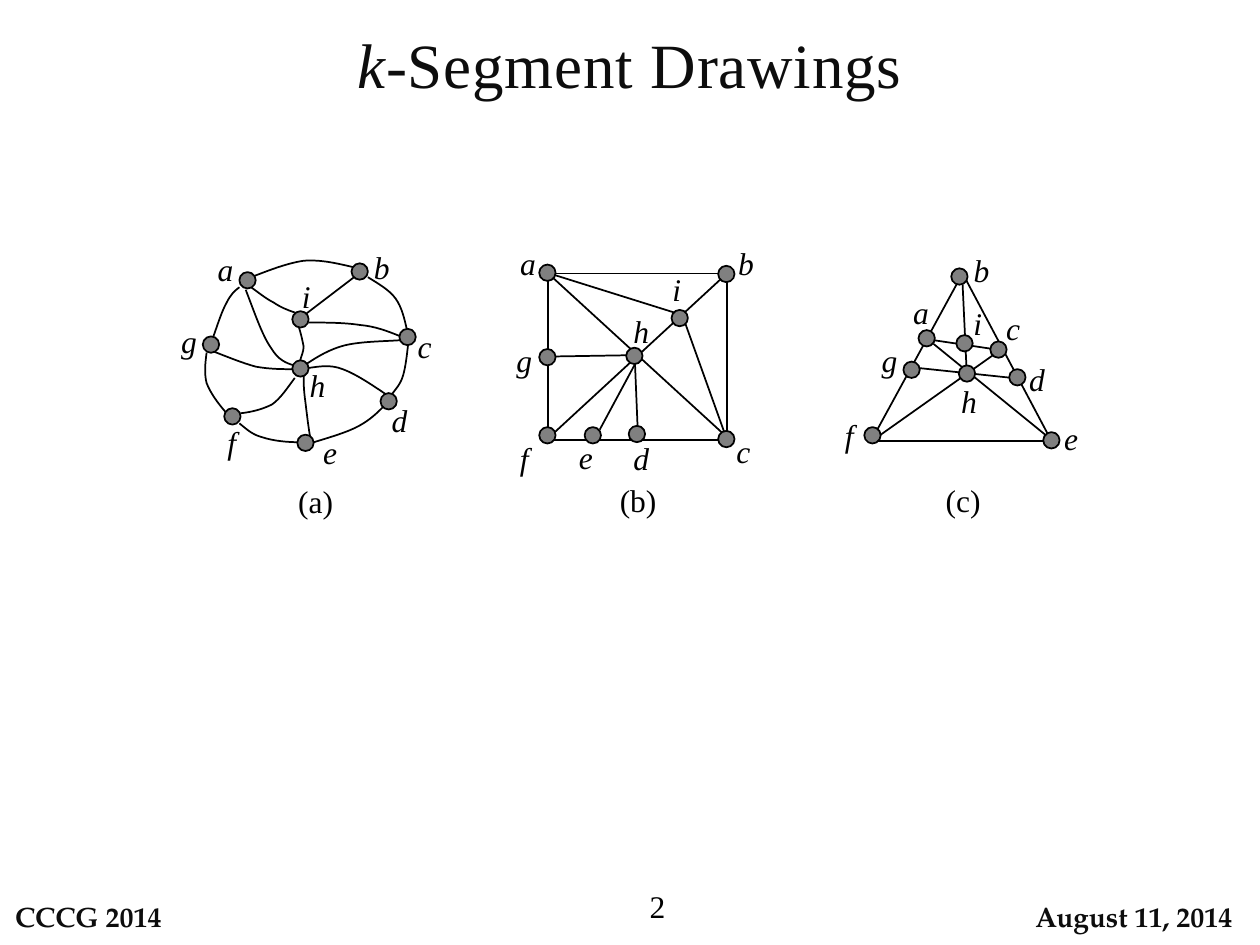
from lxml import etree
from pptx import Presentation, util as u
from pptx.dml.color import RGBColor
from pptx.enum import shapes, text
from pptx.oxml.ns import qn

COLORS = {"ink": "000000", "heading": "0D0D0D", "vertex": "808080"}
SERIF, FOOTER = "Times New Roman", "TeX Gyre Pagella"
COLS, ROWS = 10, 7.5  # square grid cells covering the slide
DOT = 0.13
LABEL = (0.38, 0.25)
CAPTION = (0.53, 0.25)

# Vertices: name -> dot column, dot row, label column, label row
CURVED_VERTICES = {
    "a": (1.9, 2.16, 1.6, 2.01), "b": (2.79, 2.09, 2.84, 1.99),
    "c": (3.17, 2.61, 3.18, 2.62), "d": (3.02, 3.12, 2.98, 3.21),
    "e": (2.36, 3.45, 2.43, 3.46), "f": (1.78, 3.24, 1.65, 3.38),
    "g": (1.61, 2.67, 1.31, 2.58), "h": (2.32, 2.86, 2.33, 2.93),
    "i": (2.32, 2.47, 2.24, 2.22),
}
SQUARE_VERTICES = {
    "a": (4.28, 2.1, 4, 1.96), "b": (5.7, 2.11, 5.73, 1.96),
    "c": (5.7, 3.42, 5.71, 3.45), "d": (4.99, 3.38, 4.9, 3.51),
    "e": (4.64, 3.39, 4.46, 3.5), "f": (4.28, 3.39, 3.97, 3.51),
    "g": (4.28, 2.77, 3.97, 2.73), "h": (4.97, 2.76, 4.9, 2.5),
    "i": (5.33, 2.46, 5.18, 2.17),
}
TRIANGLE_VERTICES = {
    "a": (7.29, 2.62, 7.12, 2.35), "b": (7.55, 2.13, 7.6, 2.02),
    "c": (7.86, 2.71, 7.85, 2.48), "d": (8.01, 2.93, 8.04, 2.88),
    "e": (8.28, 3.43, 8.31, 3.35), "f": (6.86, 3.39, 6.55, 3.33),
    "g": (7.17, 2.87, 6.87, 2.73), "h": (7.61, 2.9, 7.5, 3.06),
    "i": (7.59, 2.66, 7.57, 2.44),
}

# Curved edges: a start point, then control, control, end for each Bezier piece
CURVES = [
    [(2.45, 2.56), (2.59, 2.56), (2.73, 2.56), (2.86, 2.58), (2.98, 2.59), (3.08, 2.63), (3.18, 2.67)],
    [(2.92, 2.2), (3, 2.25), (3.09, 2.3), (3.14, 2.37), (3.19, 2.44), (3.21, 2.53), (3.23, 2.62)],
    [(2.38, 2.87), (2.39, 2.83), (2.41, 2.79), (2.41, 2.75), (2.4, 2.7), (2.39, 2.65), (2.37, 2.59)],
    [(1.67, 2.78), (1.8, 2.83), (1.92, 2.88), (2.03, 2.91), (2.14, 2.93), (2.24, 2.93), (2.33, 2.93)],
    [(1.91, 3.28), (2, 3.27), (2.08, 3.25), (2.16, 3.21), (2.23, 3.16), (2.28, 3.08), (2.34, 3)],
    [(1.64, 2.8), (1.63, 2.88), (1.62, 2.96), (1.64, 3.04), (1.67, 3.12), (1.73, 3.2), (1.79, 3.27)],
    [(2.46, 3.46), (2.44, 3.34), (2.43, 3.23), (2.42, 3.16), (2.41, 3.08), (2.41, 3.03), (2.41, 2.98)],
    [(2.45, 2.92), (2.53, 2.91), (2.62, 2.89), (2.72, 2.93), (2.83, 2.97), (2.96, 3.06), (3.08, 3.14)],
    [(1.9, 3.36), (1.95, 3.4), (2, 3.45), (2.08, 3.47), (2.17, 3.5), (2.28, 3.51), (2.38, 3.51)],
    [(2.49, 3.51), (2.62, 3.47), (2.76, 3.43), (2.85, 3.38), (2.94, 3.33), (2.99, 3.28), (3.04, 3.23)],
    [(3.11, 3.13), (3.14, 3.09), (3.18, 3.05), (3.2, 2.98), (3.22, 2.91), (3.23, 2.82), (3.24, 2.73)],
    [(2.43, 2.89), (2.52, 2.83), (2.62, 2.77), (2.74, 2.74), (2.87, 2.71), (3.03, 2.71), (3.18, 2.7)],
    [(1.69, 2.68), (1.73, 2.57), (1.76, 2.47), (1.8, 2.4), (1.83, 2.34), (1.86, 2.31), (1.9, 2.28)],
    [(2.02, 2.19), (2.15, 2.14), (2.28, 2.09), (2.41, 2.07), (2.55, 2.06), (2.67, 2.09), (2.8, 2.12)],
    [(1.98, 2.27), (2.05, 2.32), (2.11, 2.37), (2.17, 2.4), (2.23, 2.44), (2.28, 2.46), (2.34, 2.48)],
    [(1.95, 2.3), (2.02, 2.48), (2.08, 2.66), (2.15, 2.76), (2.21, 2.86), (2.27, 2.88), (2.33, 2.9)],
]

# Straight edges: from column, row to column, row
CURVED_LINES = [(2.43, 2.49, 2.81, 2.2)]
SQUARE_LINES = [
    (4.36, 3.47, 5.77, 2.17), (5.77, 3.47, 4.35, 2.17), (5.35, 2.48, 4.36, 2.17),
    (4.97, 2.82, 4.35, 2.83), (4.76, 3.41, 5.04, 2.89), (5.06, 3.38, 5.04, 2.89),
    (5.77, 3.49, 5.44, 2.57),
]
TRIANGLE_LINES = [
    (6.93, 3.47, 7.64, 2.17), (8.32, 3.47, 7.41, 2.73), (7.88, 2.77, 7.41, 2.7),
    (8.04, 3, 7.28, 2.92), (6.99, 3.45, 7.88, 2.82), (7.64, 2.26, 7.67, 2.9),
    (8.34, 3.49, 7.64, 2.17), (8.28, 3.5, 6.97, 3.5),
]


class Deck:
    """Style, grid and current slide."""

    def __init__(self):
        self.prs = Presentation()
        self.prs.slide_width, self.prs.slide_height = u.Inches(10), u.Inches(7.5)
        self.s = self.prs.slides.add_slide(self.prs.slide_layouts[5])

    def grid(self, *pairs):
        """Turn alternating columns and rows into slide lengths."""
        cells = (self.prs.slide_width / COLS, self.prs.slide_height / ROWS)
        return [u.Emu(round(v * cells[n % 2])) for n, v in enumerate(pairs)]

    def color(self, name):
        return RGBColor.from_string(COLORS[name])

    def outline(self, sp, fill=None):
        sp.shadow.inherit = False
        if fill:
            sp.fill.solid()
            sp.fill.fore_color.rgb = self.color(fill)
        else:
            sp.fill.background()
        sp.line.color.rgb = self.color("ink")
        sp.line.width = u.Pt(1)

    def put_text(self, sp, words, size, font=SERIF, color="ink", align="CENTER",
                 bold=False, italic=None):
        tf = sp.text_frame
        tf.word_wrap = True
        tf.vertical_anchor = text.MSO_ANCHOR.MIDDLE
        p = tf.paragraphs[0]
        p.text = words
        p.alignment = text.PP_ALIGN[align]
        p.font.size, p.font.name = u.Pt(size), font
        p.font.bold, p.font.italic = bold, italic
        p.font.color.rgb = self.color(color)
        return p

    def title(self, at, lead, rest):
        sp = self.s.shapes.title
        sp.left, sp.top, sp.width, sp.height = self.grid(*at)
        p = self.put_text(sp, lead, 36, color="heading")
        p.runs[0].font.italic = True
        p.add_run().text = rest
        for r in p.runs:
            r.font._element.set("spc", "50")

    def label(self, at, words, inset=0, align="CENTER", italic=None):
        sp = self.s.shapes.add_textbox(*self.grid(*at))
        tf = sp.text_frame
        tf.margin_left = tf.margin_right = u.Inches(inset)
        tf.margin_top = tf.margin_bottom = 0
        self.put_text(sp, words, 18, align=align, italic=italic)

    def footer(self, at, words, align):
        sp = self.s.shapes.add_shape(shapes.MSO_SHAPE.ROUNDED_RECTANGLE, *self.grid(*at))
        sp.shadow.inherit = False
        sp.fill.background()
        sp.line.fill.background()
        self.put_text(sp, words, 16, FOOTER, "heading", align, bold=True)

    def shape(self, kind, at, fill=None):
        self.outline(self.s.shapes.add_shape(kind, *self.grid(*at)), fill)

    def line(self, ends):
        c = self.s.shapes.add_connector(shapes.MSO_CONNECTOR.STRAIGHT, *self.grid(*ends))
        c.line.color.rgb = self.color("ink")
        c.line.width = u.Pt(1)
        etree.SubElement(c._element.spPr, qn("a:effectLst"))

    def curve(self, points):
        start, *rest = [self.grid(*pt) for pt in points]
        builder = self.s.shapes.build_freeform(*start, scale=1.0)
        builder.add_line_segments(rest, close=False)
        sp = builder.convert_to_shape()
        # Every three straight pieces become one cubic Bezier
        pieces = list(sp._element.iter(qn("a:lnTo")))
        for n in range(0, len(pieces), 3):
            bezier = pieces[n]
            bezier.tag = qn("a:cubicBezTo")
            for piece in pieces[n + 1:n + 3]:
                bezier.append(piece[0])
                piece.getparent().remove(piece)
        self.outline(sp)

    def graph(self, caption, caption_at, vertices, lines, curves=()):
        for points in curves:
            self.curve(points)
        for ends in lines:
            self.line(ends)
        for name, (x, y, label_x, label_y) in vertices.items():
            self.shape(shapes.MSO_SHAPE.OVAL, (x, y, DOT, DOT), "vertex")
            self.label((label_x, label_y, *LABEL), name, italic=True)
        self.label((*caption_at, *CAPTION), caption)


def main():
    deck = Deck()
    deck.title((0, 0.15, COLS, 0.71), "k", "-Segment Drawings")

    # Three drawings of the same graph
    deck.graph("(a)", (2.24, 3.85), CURVED_VERTICES, CURVED_LINES, CURVES)
    deck.shape(shapes.MSO_SHAPE.RECTANGLE, (4.35, 2.17, 1.42, 1.32))
    deck.graph("(b)", (4.8, 3.84), SQUARE_VERTICES, SQUARE_LINES)
    deck.graph("(c)", (7.38, 3.84), TRIANGLE_VERTICES, TRIANGLE_LINES)

    # Footer
    deck.footer((0, 7.05, 1.54, 0.45), "CCCG 2014", "LEFT")
    deck.footer((8, 7.05, 2, 0.45), "August 11, 2014", "CENTER")
    deck.label((3.05, 6.99, 2.33, 0.4), "2", inset=0.1, align="RIGHT")

    deck.prs.save("out.pptx")


if __name__ == "__main__":
    main()
